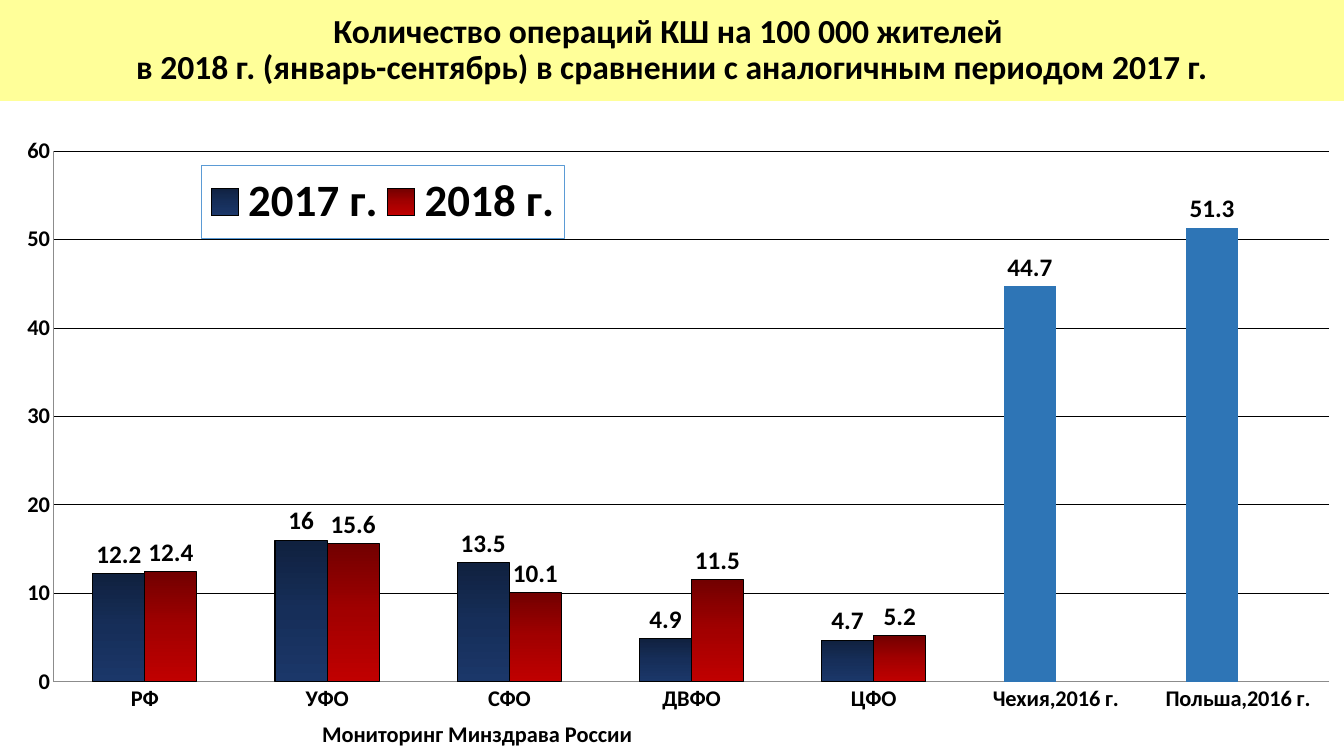
from copy import deepcopy

from pptx import Presentation
from pptx import util as u
from pptx.chart.data import CategoryChartData
from pptx.dml.color import RGBColor
from pptx.enum import chart as ch, text
from pptx.oxml import parse_xml
from pptx.oxml.ns import nsdecls


def rgb(color):
    return RGBColor.from_string(color)


class Deck:
    """Holds the style and the current slide."""
    font, black, grey = "Calibri", "000000", "8C8C8C"
    band, frame, abroad = "FFFF99", "5B9BD5", "2E75B6"

    def __init__(self, width, height):
        self.prs = Presentation()
        self.prs.slide_width, self.prs.slide_height = u.Pt(width), u.Pt(height)

    def add_slide(self):
        self.s = self.prs.slides.add_slide(self.prs.slide_layouts[5])

    def style(self, font, size, bold=True):
        font.name, font.size, font.bold = self.font, u.Pt(size), bold
        font.color.rgb = rgb(self.black)

    def place(self, sp, box):
        sp.left, sp.top, sp.width, sp.height = map(u.Pt, box)

    def add_lines(self, p, lines, size):
        for i, line in enumerate(lines):
            if i:
                p.add_line_break()
            r = p.add_run()
            r.text = line
            self.style(r.font, size)

    def title(self, box, lines, size):
        sp = self.s.shapes.title
        self.place(sp, box)
        sp.fill.solid()
        sp.fill.fore_color.rgb = rgb(self.band)
        tf = sp.text_frame
        tf.auto_size = text.MSO_AUTO_SIZE.NONE
        tf.vertical_anchor = text.MSO_ANCHOR.MIDDLE
        p = tf.paragraphs[0]
        p.alignment, p.line_spacing = text.PP_ALIGN.CENTER, 0.9
        self.add_lines(p, lines, size)

    def label(self, box, line, size):
        tf = self.s.shapes.add_textbox(*map(u.Pt, box)).text_frame
        tf.word_wrap = True
        self.add_lines(tf.paragraphs[0], [line], size)

    def layout(self, parent, index, box, target=""):
        """Set a manual layout, in fractions of the chart."""
        for old in parent.xpath("./c:layout"):
            parent.remove(old)
        sizes = "".join(f'<c:{k} val="{v}"/>' for k, v in zip("xywh", box))
        parent.insert(index, parse_xml(
            f'<c:layout {nsdecls("c")}><c:manualLayout>{target}<c:xMode val="edge"/>'
            f'<c:yMode val="edge"/>{sizes}</c:manualLayout></c:layout>'))

    def gradient(self, series, colors):
        fill = series.format.fill
        fill.gradient()
        fill.gradient_angle = 270
        stops = series._element.xpath("./c:spPr/a:gradFill/a:gsLst")[0]
        stops.insert(1, deepcopy(stops[0]))
        for i, (stop, color) in enumerate(zip(fill.gradient_stops, colors)):
            stop.position = i / 2
            stop.color.rgb = rgb(color)

    def columns(self, box, cats, series, abroad):
        data = CategoryChartData()
        data.categories = cats
        for name, values, _ in series:
            data.add_series(name, values)
        chart = self.s.shapes.add_chart(
            ch.XL_CHART_TYPE.COLUMN_CLUSTERED, *map(u.Pt, box), data).chart
        chart.has_title = False
        self.style(chart.font, 18, False)
        self.layout(chart._chartSpace.chart.plotArea, 0, (0.04, 0.037, 0.949, 0.873),
                    '<c:layoutTarget val="inner"/>')

        # Series
        plot = chart.plots[0]
        plot.vary_by_categories = False
        plot.gap_width, plot.overlap = 150, 0
        for ser, (_, _, colors) in zip(plot.series, series):
            self.gradient(ser, colors)
            ser.format.line.color.rgb = rgb(self.black)
            ser.format.line.width = u.Pt(0.75)
            labels = ser.data_labels
            labels.show_value = True
            labels.position = ch.XL_LABEL_POSITION.OUTSIDE_END
            self.style(labels.font, 18)
        for i in abroad:
            fmt = plot.series[0].points[i].format
            fmt.fill.solid()
            fmt.fill.fore_color.rgb = rgb(self.abroad)
            fmt.line.fill.background()

        # Axes
        for axis in (chart.category_axis, chart.value_axis):
            axis.major_tick_mark = axis.minor_tick_mark = ch.XL_TICK_MARK.NONE
            axis.format.line.color.rgb = rgb(self.grey)
            self.style(axis.tick_labels.font, 16)
        axis.minimum_scale, axis.maximum_scale, axis.major_unit = 0, 60, 10
        grid = axis.major_gridlines.format.line
        grid.color.rgb, grid.width = rgb(self.black), u.Pt(0.75)
        self.legend(chart)

    def legend(self, chart):
        chart.has_legend = True
        legend = chart.legend
        legend.position = ch.XL_LEGEND_POSITION.RIGHT
        legend.include_in_layout = False
        self.style(legend.font, 32)
        el = legend._element
        self.layout(el, 1, (0.15, 0.06, 0.27, 0.12))
        el.xpath("./c:txPr")[0].addprevious(parse_xml(
            f'<c:spPr {nsdecls("c", "a")}><a:solidFill><a:srgbClr val="FFFFFF"/></a:solidFill>'
            f'<a:ln w="9525"><a:solidFill><a:srgbClr val="{self.frame}"/></a:solidFill></a:ln>'
            '</c:spPr>'))


def main():
    deck = Deck(960, 540)
    deck.add_slide()

    # Heading
    deck.title((0, 0, 960, 72), [
        "Количество операций КШ на 100 000 жителей ",
        "в 2018 г. (январь-сентябрь) в сравнении с аналогичным периодом 2017 г."], 24)

    # Operations by district, with two countries for comparison
    cats = ["РФ", "УФО", "СФО", "ДВФО", "ЦФО", "Чехия,2016 г.", "Польша,2016 г."]
    series = [
        ("2017 г.", (12.2, 16, 13.5, 4.9, 4.7, 44.7, 51.3), ("10213F", "162E59", "1B3769")),
        ("2018 г.", (12.4, 15.6, 10.1, 11.5, 5.2, None, None), ("720000", "A20000", "C00000")),
    ]
    deck.columns((0, 92, 960, 434), cats, series, abroad=(5, 6))

    # Data source
    deck.label((223, 511, 291, 27), "Мониторинг Минздрава России", 16)

    deck.prs.save("out.pptx")


if __name__ == "__main__":
    main()
